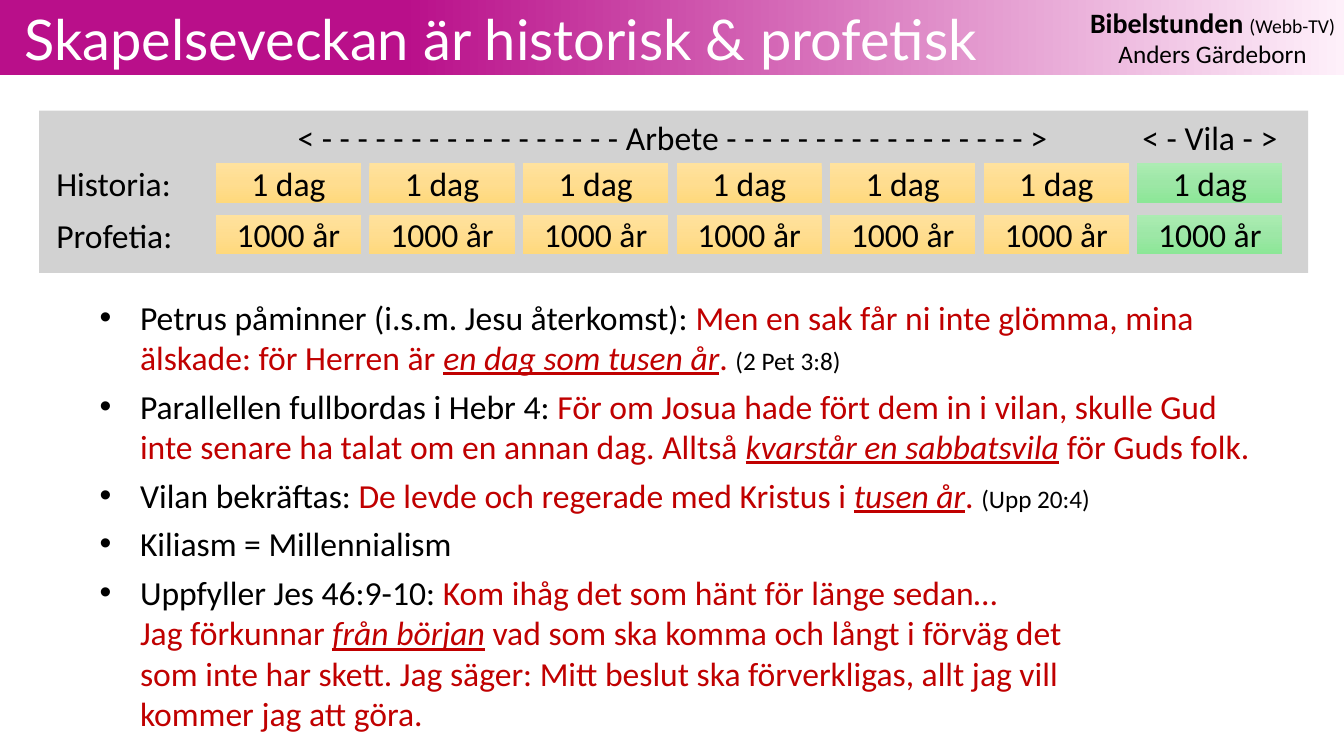
import dataclasses

import lxml.etree
import pptx
import pptx.dml.color
import pptx.enum.shapes
import pptx.enum.text
import pptx.oxml.ns
import pptx.util

Cm = pptx.util.Cm
ALIGN = pptx.enum.text.PP_ALIGN
ANCHOR = pptx.enum.text.MSO_ANCHOR
qn = pptx.oxml.ns.qn


@dataclasses.dataclass(frozen=True)
class Theme:
    """Colours, gradients, fonts and type sizes of the slide."""
    black: str = "000000"
    white: str = "FFFFFF"
    red: str = "C00000"
    panel: str = "D2D2D2"
    banner: tuple = ((0, "B90F8A"), (30, "B90F8A"), (100, "FEF0FA"))
    work: tuple = ((0, "FFE29E"), (50, "FFDD90"), (100, "FFD97C"))
    rest: tuple = ((0, "ACECB3"), (50, "9DE7A6"), (100, "8CE797"))
    heading_font: str = "Lato"
    body_font: str = "Calibri"
    title: int = 40
    body: int = 24
    channel: int = 20
    small: int = 18
    tiny: int = 14


THEME = Theme()
QUOTE = dict(color=THEME.red)
STRESS = dict(color=THEME.red, italic=True, underline=True)
REFERENCE = dict(size=THEME.small)

POINTS = [
    [("Petrus påminner (i.s.m. Jesu återkomst): ", {}),
     ("Men en sak får ni inte glömma, mina älskade: för Herren är ", QUOTE),
     ("en dag som tusen år", STRESS), (". ", QUOTE), ("(2 Pet 3:8)", REFERENCE)],
    [("Parallellen fullbordas i Hebr 4: ", {}),
     ("För om Josua hade fört dem in i vilan, skulle Gud inte senare ha talat "
      "om en annan dag. Alltså ", QUOTE),
     ("kvarstår en sabbatsvila", STRESS), (" för Guds folk.", QUOTE)],
    [("Vilan bekräftas: ", {}), ("De levde och regerade med Kristus i ", QUOTE),
     ("tusen år", STRESS), (". ", QUOTE), ("(Upp 20:4)", REFERENCE)],
    [("Kiliasm = Millennialism", {})],
    [("Uppfyller Jes 46:9-10: ", {}),
     ("Kom ihåg det som hänt för länge sedan… \nJag förkunnar ", QUOTE),
     ("från början", STRESS),
     (" vad som ska komma och långt i förväg det \nsom inte har skett. Jag säger: "
      "Mitt beslut ska förverkligas, allt jag vill \nkommer jag att göra.", QUOTE)],
]


def write(paragraph, text, size=THEME.body, color=THEME.black, font=THEME.body_font,
          bold=False, italic=False, underline=False):
    """Append formatted text to a paragraph, breaking lines at newlines."""
    for number, line in enumerate(text.split("\n")):
        if number:
            paragraph.add_line_break()
        if line:
            run = paragraph.add_run()
            run.text = line
            run.font.name = font
            run.font.size = pptx.util.Pt(size)
            run.font.color.rgb = pptx.dml.color.RGBColor.from_string(color)
            run.font.bold, run.font.italic, run.font.underline = bold, italic, underline


def set_frame(frame, insets=(0.25, 0.13, 0.25, 0.13), wrap=True, anchor=ANCHOR.TOP):
    """Set the insets, wrapping and anchor of a text frame."""
    frame.margin_left, frame.margin_top, frame.margin_right, frame.margin_bottom = map(Cm, insets)
    frame.word_wrap = wrap
    frame.vertical_anchor = anchor
    frame.auto_size = pptx.enum.text.MSO_AUTO_SIZE.NONE


def add_text(shapes, box, align=ALIGN.LEFT, **frame_format):
    """Add a text box and return its first paragraph."""
    frame = shapes.add_textbox(*map(Cm, box)).text_frame
    set_frame(frame, **frame_format)
    frame.paragraphs[0].alignment = align
    return frame.paragraphs[0]


def add_block(shapes, box, fill, angle=270):
    """Add a rectangle without outline, filled with a colour or gradient stops."""
    block = shapes.add_shape(pptx.enum.shapes.MSO_SHAPE.RECTANGLE, *map(Cm, box))
    block.shadow.inherit = False
    block.line.fill.background()
    if isinstance(fill, str):
        block.fill.solid()
        block.fill.fore_color.rgb = pptx.dml.color.RGBColor.from_string(fill)
        return block
    block.fill.gradient()
    block.fill.gradient_angle = angle
    stops = block._element.spPr.find(".//" + qn("a:gsLst"))
    for stop in list(stops):
        stops.remove(stop)
    for position, color in fill:
        stop = lxml.etree.SubElement(stops, qn("a:gs"), pos=str(position * 1000))
        lxml.etree.SubElement(stop, qn("a:srgbClr"), val=color)
    return block


def add_banner(slide, box):
    """Place the gradient banner with the title and the speaker credit."""
    left, top, width, height = box
    add_block(slide.shapes, box, THEME.banner, angle=0)
    credit = add_text(slide.shapes, (left + width - 6.56, top + 0.13, 6.5, 1.63),
                      align=ALIGN.CENTER, insets=(0.25, 0, 0.25, 0), wrap=False)
    write(credit, "Bibelstunden", size=THEME.channel, bold=True)
    write(credit, " ", size=THEME.small)
    write(credit, "(Webb-TV)\n", size=THEME.tiny)
    write(credit, "Anders Gärdeborn", size=THEME.small)
    title = slide.shapes.title
    title.left, title.top, title.width, title.height = map(Cm, box)
    set_frame(title.text_frame, insets=(0.61, 0.13, 0.25, 0.13), anchor=ANCHOR.MIDDLE)
    heading = title.text_frame.paragraphs[0]
    heading.alignment = ALIGN.LEFT
    write(heading, "Skapelseveckan är historisk & profetisk", size=THEME.title,
          color=THEME.white, font=THEME.heading_font)
    slide.shapes._spTree.append(title._element)


def add_week(slide, box):
    """Place the panel that compares the days of the week with millennia."""
    left, top, width, height = box
    week = slide.shapes.add_group_shape().shapes
    add_block(week, box, THEME.panel)
    work_days = 6
    first, step, cell_width = left + 4.45, 3.87, 3.66
    dashes = " ".join("-" * 17)
    headings = ((first, step * (work_days - 1) + cell_width, f"< {dashes} Arbete {dashes} >"),
                (first + step * work_days, cell_width, "< - Vila - >"))
    for heading_left, span, heading in headings:
        write(add_text(week, (heading_left, top + 0.03, span, 1.27), align=ALIGN.CENTER,
                       wrap=False), heading)
    for row, (label, period) in enumerate((("Historia:", "1 dag"), ("Profetia:", "1000 år"))):
        row_top = top + 1.32 + 1.3 * row
        write(add_text(week, (left + 0.18, row_top - 0.13, 4.2, 1.27)), label)
        for day in range(work_days + 1):
            fill = THEME.work if day < work_days else THEME.rest
            cell = add_block(week, (first + step * day, row_top, cell_width, 1), fill)
            set_frame(cell.text_frame, insets=(0, 0, 0, 0), anchor=ANCHOR.MIDDLE)
            cell.text_frame.paragraphs[0].alignment = ALIGN.CENTER
            write(cell.text_frame.paragraphs[0], period)


def add_points(slide, box):
    """Place the bulleted Bible passages."""
    frame = slide.shapes.add_textbox(*map(Cm, box)).text_frame
    set_frame(frame, insets=(0.61, 0, 0.2, 0))
    for number, point in enumerate(POINTS):
        paragraph = frame.add_paragraph() if number else frame.paragraphs[0]
        paragraph.space_before = pptx.util.Pt(6 if number else 0)
        properties = paragraph._p.get_or_add_pPr()
        properties.set("marL", str(Cm(1.02)))
        properties.set("indent", str(-Cm(1.02)))
        lxml.etree.SubElement(properties, qn("a:buFont"), typeface="Arial")
        lxml.etree.SubElement(properties, qn("a:buChar"), char="•")
        for text, style in point:
            write(paragraph, text, **style)


def main():
    """Build the slide and save it."""
    deck = pptx.Presentation()
    deck.slide_width, deck.slide_height = Cm(33.87), Cm(19.05)
    slide = deck.slides.add_slide(deck.slide_layouts[5])
    add_banner(slide, (0, 0, 33.87, 1.9))
    add_points(slide, (1.9, 7.47, 29.82, 11.13))
    add_week(slide, (0.99, 2.79, 31.98, 4.09))
    deck.save("out.pptx")


if __name__ == "__main__":
    main()
